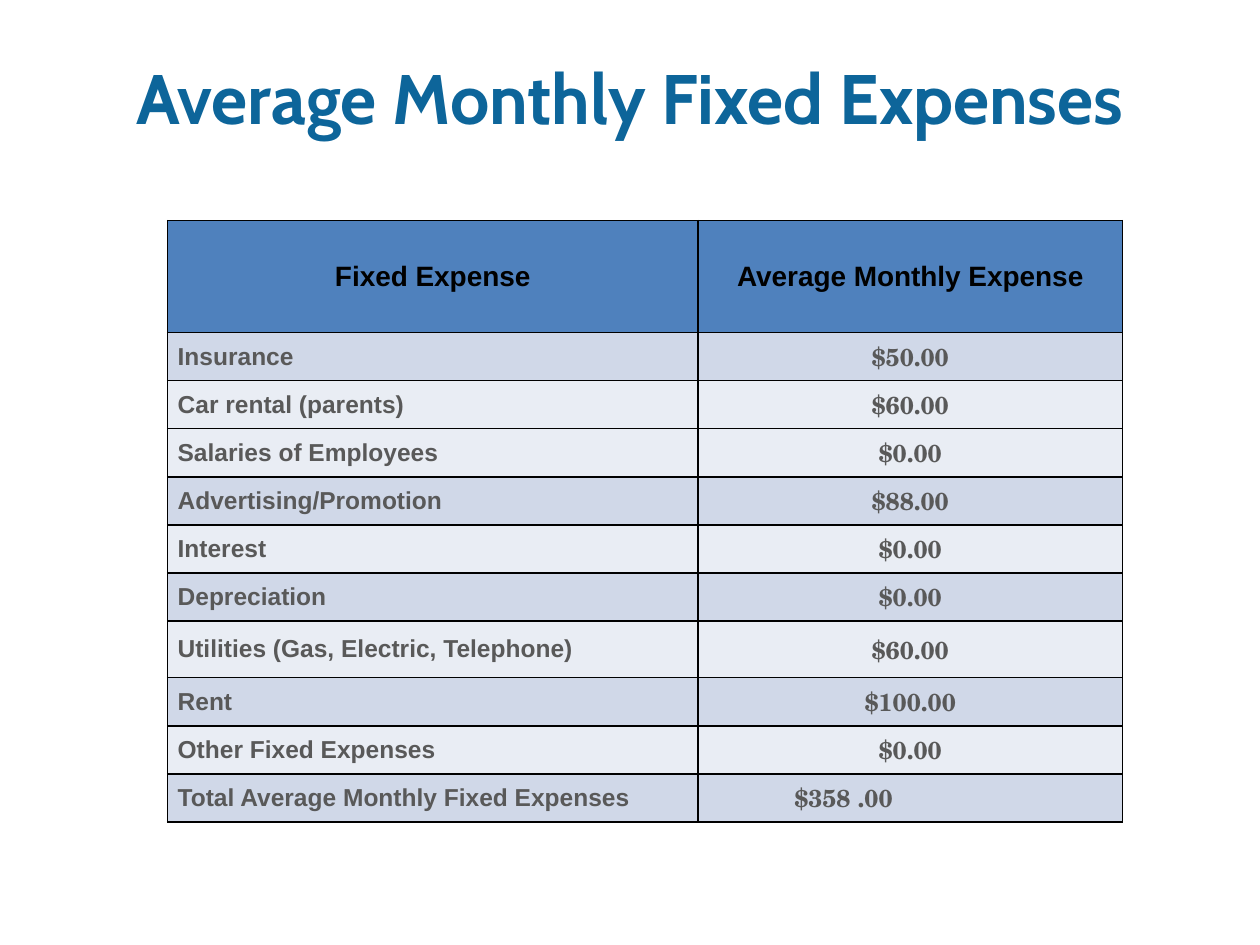
from dataclasses import dataclass

from lxml.etree import SubElement
from pptx import Presentation
from pptx.dml.color import RGBColor
from pptx.enum.text import MSO_ANCHOR, PP_ALIGN
from pptx.oxml.ns import qn
from pptx.util import Inches, Pt


@dataclass(frozen=True)
class Theme:
    title: str = "0D659A"
    header_text: str = "000000"
    body_text: str = "595959"
    border: str = "000000"
    header_fill: str = "4F81BD"
    dark_band: str = "D0D8E8"
    light_band: str = "E9EDF4"
    title_font: str = "Cabin"
    label_font: str = "Arial"
    amount_font: str = "TeX Gyre Schola"
    title_size: int = 40
    header_size: int = 16
    body_size: int = 14


THEME = Theme()
DARK, LIGHT = THEME.dark_band, THEME.light_band

HEADERS = ("Fixed Expense", "Average Monthly Expense")
EXPENSES = (
    ("Insurance", "$50.00", DARK),
    ("Car rental (parents)", "$60.00", LIGHT),
    ("Salaries of Employees", "$0.00", LIGHT),
    ("Advertising/Promotion", "$88.00", DARK),
    ("Interest", "$0.00", LIGHT),
    ("Depreciation", "$0.00", DARK),
    ("Utilities (Gas, Electric, Telephone)", "$60.00", LIGHT),
    ("Rent", "$100.00", DARK),
    ("Other Fixed Expenses", "$0.00", LIGHT),
    ("Total Average Monthly Fixed Expenses", "$358 .00", DARK),
)
COLUMN_WIDTHS = (4.21, 3.37)
HEADER_HEIGHT, ROW_HEIGHT, UTILITIES_HEIGHT = 0.89, 0.38, 0.45
UTILITIES_ROW = 7
TOTAL_RIGHT_MARGIN = 1.14


def add_run(p, text, font, size, color):
    r = p.add_run()
    r.text = text
    r.font.name = font
    r.font.size = Pt(size)
    r.font.bold = True
    r.font.color.rgb = RGBColor.from_string(color)


def add_title(slide, text):
    title = slide.shapes.title
    title.left, title.top = Inches(0.5), Inches(0.3)
    title.width, title.height = Inches(9), Inches(1.12)
    tf = title.text_frame
    tf.vertical_anchor = MSO_ANCHOR.MIDDLE
    p = tf.paragraphs[0]
    p.alignment = PP_ALIGN.CENTER
    p.line_spacing = Pt(34)
    add_run(p, text, THEME.title_font, THEME.title_size, THEME.title)


def set_borders(cell):
    """Draw a 1 pt line on each side; line elements must precede the fill."""
    tc_pr = cell._tc.get_or_add_tcPr()
    for i, side in enumerate(("a:lnL", "a:lnR", "a:lnT", "a:lnB")):
        ln = SubElement(tc_pr, qn(side), w=str(Pt(1)))
        fill = SubElement(ln, qn("a:solidFill"))
        SubElement(fill, qn("a:srgbClr"), val=THEME.border)
        tc_pr.insert(i, ln)


def fill_cell(cell, text, fill, font, size, color, align):
    cell.fill.solid()
    cell.fill.fore_color.rgb = RGBColor.from_string(fill)
    cell.vertical_anchor = MSO_ANCHOR.MIDDLE
    cell.margin_left = cell.margin_right = Inches(0.08)
    cell.margin_top = cell.margin_bottom = Inches(0.04)
    set_borders(cell)
    p = cell.text_frame.paragraphs[0]
    p.alignment = align
    add_run(p, text, font, size, color)


def add_expense_table(slide):
    heights = [HEADER_HEIGHT] + [ROW_HEIGHT] * len(EXPENSES)
    heights[UTILITIES_ROW] = UTILITIES_HEIGHT
    table = slide.shapes.add_table(
        len(heights), len(HEADERS), Inches(1.33), Inches(1.75),
        Inches(sum(COLUMN_WIDTHS)), Inches(sum(heights))).table
    for column, width in zip(table.columns, COLUMN_WIDTHS):
        column.width = Inches(width)
    for row, height in zip(table.rows, heights):
        row.height = Inches(height)

    for col, text in enumerate(HEADERS):
        fill_cell(table.cell(0, col), text, THEME.header_fill, THEME.label_font,
                  THEME.header_size, THEME.header_text, PP_ALIGN.CENTER)
    for row, (label, amount, band) in enumerate(EXPENSES, start=1):
        fill_cell(table.cell(row, 0), label, band, THEME.label_font,
                  THEME.body_size, THEME.body_text, PP_ALIGN.LEFT)
        fill_cell(table.cell(row, 1), amount, band, THEME.amount_font,
                  THEME.body_size, THEME.body_text, PP_ALIGN.CENTER)
    # The total sits left of the other amounts
    table.cell(len(EXPENSES), 1).margin_right = Inches(TOTAL_RIGHT_MARGIN)


def main():
    prs = Presentation()
    prs.slide_width, prs.slide_height = Inches(10), Inches(7.5)
    slide = prs.slides.add_slide(prs.slide_layouts.get_by_name("Title Only"))
    add_title(slide, "Average Monthly Fixed Expenses")
    add_expense_table(slide)
    prs.save("out.pptx")


if __name__ == "__main__":
    main()
